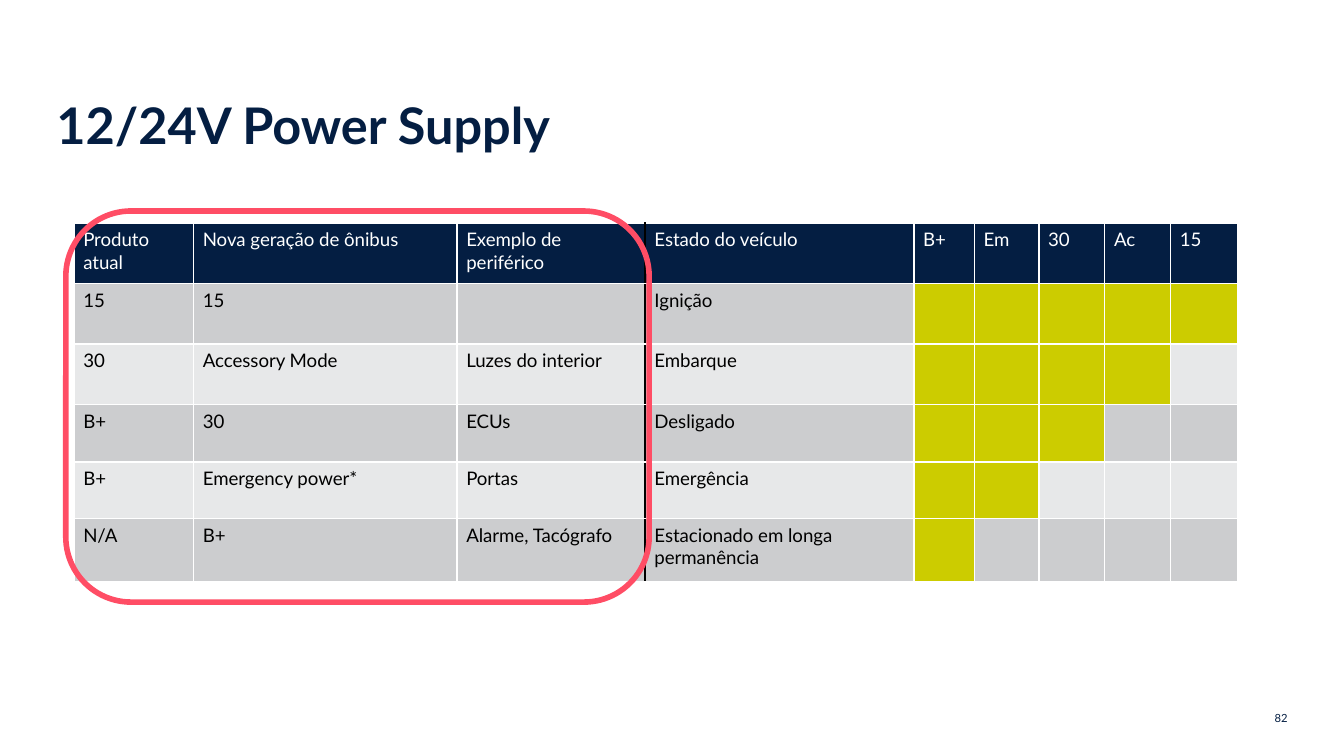
from lxml import etree
from pptx import Presentation
from pptx.dml.color import RGBColor
from pptx.enum.shapes import MSO_SHAPE
from pptx.enum.text import MSO_ANCHOR, PP_ALIGN
from pptx.oxml.ns import qn
from pptx.util import Inches, Pt

ROUND = MSO_SHAPE.ROUNDED_RECTANGLE
BOTTOM, MIDDLE = MSO_ANCHOR.BOTTOM, MSO_ANCHOR.MIDDLE
LEFT, RIGHT = PP_ALIGN.LEFT, PP_ALIGN.RIGHT

COLORS = {"navy": "041E42", "white": "FFFFFF", "black": "000000",
          "dark": "CCCDCF", "light": "E7E8E9", "lime": "CCCC00", "red": "FF4D65"}


def add_run(para, text, size, color, bold=False):
    run = para.add_run()
    run.text = text
    run.font.name = "Lato"
    run.font.size = Pt(size)
    run.font.bold = bold
    run.font.color.rgb = RGBColor.from_string(COLORS[color])


def add_edge(cell, side, color):
    line = etree.SubElement(cell._tc.get_or_add_tcPr(), qn("a:" + side), w=str(Pt(1)))
    fill = etree.SubElement(line, qn("a:solidFill"))
    etree.SubElement(fill, qn("a:srgbClr"), val=COLORS[color])


# Widescreen page, 16 to 9
deck = Presentation()
deck.slide_width, deck.slide_height = Inches(10), Inches(10 * 9 / 16)
slide = deck.slides.add_slide(deck.slide_layouts[6])

# Title and page number
labels = [
    ("12/24V Power Supply", (0.42, 0.3, 8.68, 0.86), 27, True, BOTTOM, LEFT),
    ("82", (9.16, 5.25, 0.42, 0.18), 6, False, MIDDLE, RIGHT),
]
for text, spot, size, bold, anchor, align in labels:
    frame = slide.shapes.add_textbox(*map(Inches, spot)).text_frame
    frame.word_wrap = True
    frame.vertical_anchor = anchor
    frame.margin_left = frame.margin_right = frame.margin_top = frame.margin_bottom = 0
    para = frame.paragraphs[0]
    para.alignment = align
    para.line_spacing = 0.9 if bold else 1.0
    add_run(para, text, size, "navy", bold)

# Table of supply lines and vehicle states
rows = [
    ["Produto atual", "Nova geração de ônibus", "Exemplo de periférico",
     "Estado do veículo", "B+", "Em", "30", "Ac", "15"],
    ["15", "15", "", "Ignição"],
    ["30", "Accessory Mode", "Luzes do interior", "Embarque"],
    ["B+", "30", "ECUs", "Desligado"],
    ["B+", "Emergency power*", "Portas", "Emergência"],
    ["N/A", "B+", "Alarme, Tacógrafo", "Estacionado em longa permanência"],
]
widths = [0.89, 1.96, 1.4, 2, 0.45, 0.48, 0.49, 0.49, 0.5]
heights = [0.45, 0.45, 0.45, 0.43, 0.42, 0.47]
STATE = 3  # column of the vehicle state, after the black divider

table = slide.shapes.add_table(len(rows), len(widths), Inches(0.55), Inches(1.66),
                               Inches(8.66), Inches(2.67)).table
table.first_row = table.horz_banding = False
for col, width in zip(table.columns, widths):
    col.width = Inches(width)
for row, height in zip(table.rows, heights):
    row.height = Inches(height)

for r, texts in enumerate(rows):
    for c in range(len(widths)):
        cell = table.cell(r, c)
        cell.margin_left = cell.margin_right = Inches(0.07)
        cell.margin_top = cell.margin_bottom = Inches(0.04)
        add_edge(cell, "lnL", "black" if c == STATE else "white")
        add_edge(cell, "lnR", "black" if c == STATE - 1 else "white")
        add_edge(cell, "lnT", "white")
        add_edge(cell, "lnB", "white")
        # Each state powers one line fewer than the state above it
        if r == 0:
            shade = "navy"
        elif STATE < c <= STATE + len(rows) - r:
            shade = "lime"
        else:
            shade = "dark" if r % 2 else "light"
        cell.fill.solid()
        cell.fill.fore_color.rgb = RGBColor.from_string(COLORS[shade])
        if c < len(texts) and texts[c]:
            add_run(cell.text_frame.paragraphs[0], texts[c], 10,
                    "white" if r == 0 else "black")

# Red frame around the product columns
ring = slide.shapes.add_shape(ROUND, Inches(0.49), Inches(1.57), Inches(4.34), Inches(2.91))
ring.shadow.inherit = False
ring.fill.background()
ring.line.color.rgb = RGBColor.from_string(COLORS["red"])
ring.line.width = Pt(3)

deck.save("out.pptx")
